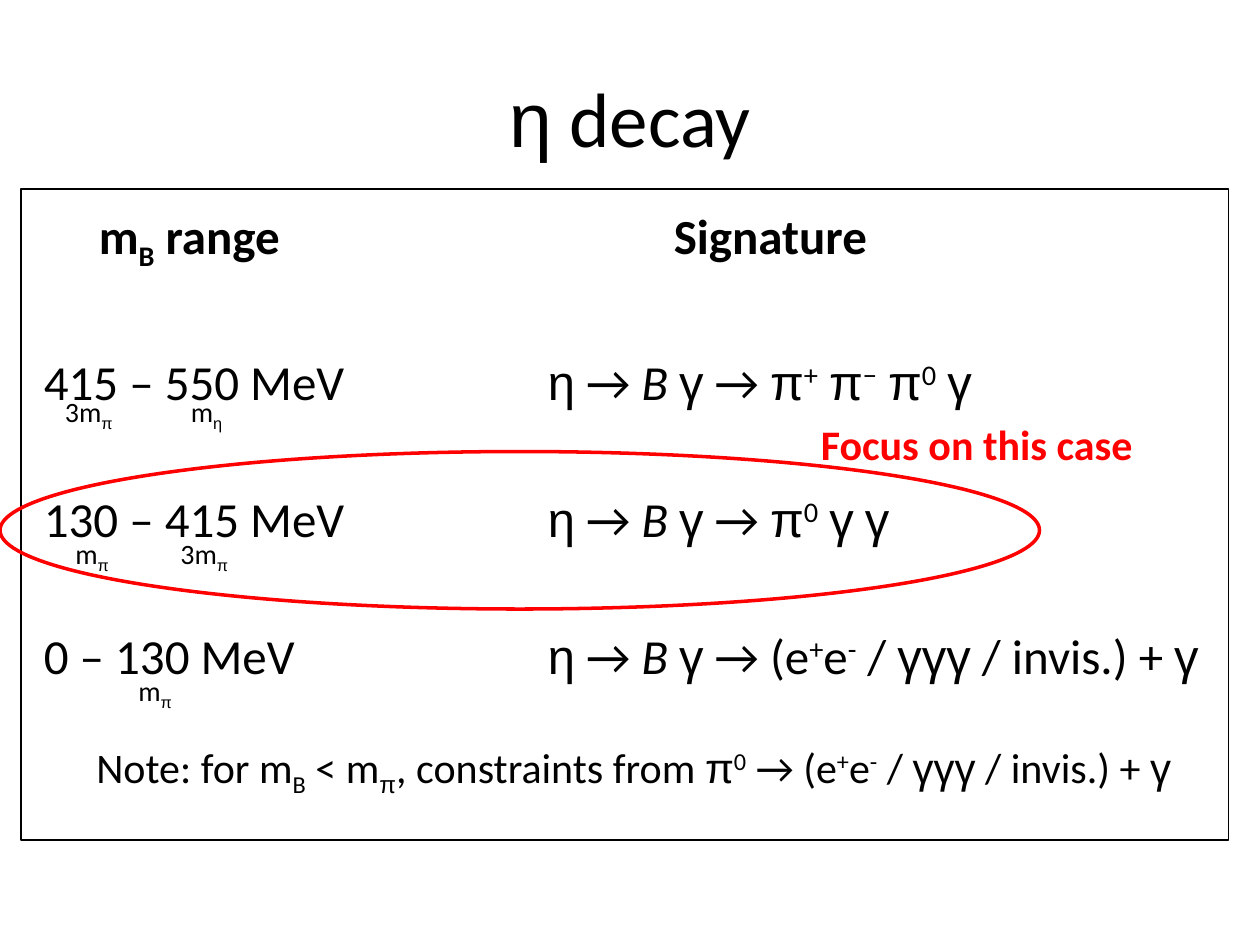
from dataclasses import dataclass
from itertools import groupby

from pptx import Presentation, util as u
from pptx.dml.color import RGBColor
from pptx.enum import shapes, text as t

Pt = u.Pt
BLACK = RGBColor(0, 0, 0)
WHITE = RGBColor(255, 255, 255)
RED = RGBColor(255, 0, 0)
SHIFT = {"^": "30000", "_": "-25000"}
DECAY = "η → |*B |γ → "
FINAL = "(e|^+|e|^-| / γγγ / invis.) + γ"
FIRST, PITCH = 197.2, 78.4


@dataclass
class Box:
    left: float
    top: float
    width: float
    height: float

    def size(self) -> tuple:
        return Pt(self.left), Pt(self.top), Pt(self.width), Pt(self.height)


@dataclass
class Mass:
    left: float
    top: float
    text: str


@dataclass
class Row:
    span: str
    sign: str


ROWS = [
    Row("415 – 550 MeV", DECAY + "π|^+| π|^−| π|^0| γ"),
    Row("130 – 415 MeV", DECAY + "π|^0| γ γ"),
    Row("0 – 130 MeV", DECAY + FINAL),
]
MASSES = [
    Mass(30, 222, "3m|_π"),
    Mass(102, 222, "m|_η"),
    Mass(36, 303, "m|_π"),
    Mass(96, 303, "3m|_π"),
    Mass(72, 381.6, "m|_π"),
]


def is_greek(char: str) -> bool:
    return "α" <= char <= "ω"


def write(para, text: str, size: float = 28, bold: bool = False,
          color: RGBColor = BLACK, align=t.PP_ALIGN.LEFT) -> None:
    para.alignment = align
    for part in text.split("|"):
        mark = part[0] if part[0] in "^_*" else ""
        for greek, chars in groupby(part[len(mark):], is_greek):
            run = para.add_run()
            run.text = "".join(chars)
            font = run.font
            font.name = "Arial" if greek else "Calibri"
            font.size = Pt(size)
            font.bold = bold
            font.italic = mark == "*"
            font.color.rgb = color
            if mark in SHIFT:
                run._r.get_or_add_rPr().set("baseline", SHIFT[mark])


def add_text(slide, box: Box, text: str, **style) -> None:
    frame = slide.shapes.add_textbox(*box.size()).text_frame
    frame.word_wrap = True
    write(frame.paragraphs[0], text, **style)


def add_row(slide, row: Row, top: float, left: float = 18,
            mid: float = 306, bold: bool = False) -> None:
    add_text(slide, Box(left, top, 230, 42), row.span, bold=bold)
    add_text(slide, Box(mid, top, 702 - mid, 42), row.sign, bold=bold)


def add_shape(slide, kind, box: Box, color: RGBColor, width: float):
    shape = slide.shapes.add_shape(kind, *box.size())
    shape.shadow.inherit = False
    shape.fill.background()
    shape.line.color.rgb = color
    shape.line.width = Pt(width)
    return shape


def main() -> None:
    deck = Presentation()
    deck.slide_width, deck.slide_height = Pt(720), Pt(540)
    slide = deck.slides.add_slide(deck.slide_layouts[5])

    frame = add_shape(slide, shapes.MSO_SHAPE.RECTANGLE,
                      Box(12, 108, 690, 372), BLACK, 1)
    frame.fill.solid()
    frame.fill.fore_color.rgb = WHITE

    title = slide.shapes.title
    title.left, title.top, title.width, title.height = Box(36, 21.6, 648, 90).size()
    title.text_frame.vertical_anchor = t.MSO_ANCHOR.MIDDLE
    write(title.text_frame.paragraphs[0], "η decay", size=44,
          align=t.PP_ALIGN.CENTER)

    add_row(slide, Row("m|_B| range", "Signature"), 114, left=49.5, mid=378,
            bold=True)
    for i, row in enumerate(ROWS):
        add_row(slide, row, FIRST + i * PITCH)

    add_text(slide, Box(48, 420, 630, 36),
             "Note: for m|_B| < m|_π|, constraints from π|^0| → " + FINAL, size=24)

    for mass in MASSES:
        add_text(slide, Box(mass.left, mass.top, 54, 26.6), mass.text, size=16)

    add_shape(slide, shapes.MSO_SHAPE.OVAL, Box(0, 258, 594, 90), RED, 2)
    add_text(slide, Box(462, 235.4, 222, 36), "Focus on this case",
             size=24, bold=True, color=RED)

    deck.save("out.pptx")


if __name__ == "__main__":
    main()
